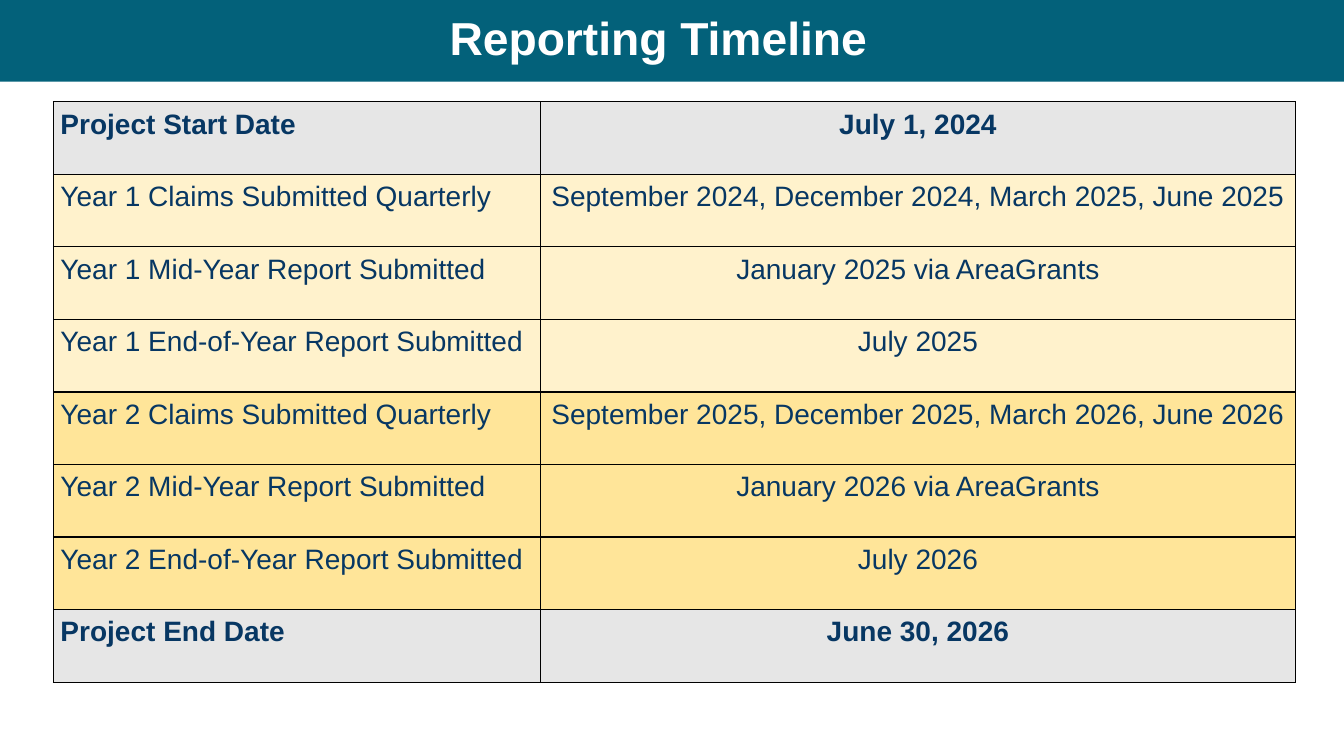
"""Build the reporting timeline slide."""
from dataclasses import dataclass

from lxml.etree import SubElement
from pptx import Presentation
from pptx.dml.color import RGBColor
from pptx.enum.shapes import MSO_SHAPE
from pptx.enum.text import MSO_ANCHOR, PP_ALIGN
from pptx.oxml.ns import qn
from pptx.slide import Slide
from pptx.table import _Cell
from pptx.text.text import _Paragraph
from pptx.util import Inches, Pt

TEAL = RGBColor(0x03, 0x61, 0x7A)
WHITE = RGBColor(0xFF, 0xFF, 0xFF)
NAVY = RGBColor(0x07, 0x37, 0x63)
BLACK = RGBColor(0x00, 0x00, 0x00)
GREY = RGBColor(0xE6, 0xE6, 0xE6)
PALE_YELLOW = RGBColor(0xFF, 0xF2, 0xCC)
YELLOW = RGBColor(0xFF, 0xE5, 0x99)

SLIDE_WIDTH = Inches(13.33)
BANNER_HEIGHT = Inches(0.81)
COLUMN_WIDTHS = (Inches(4.83), Inches(7.49))
ROW_HEIGHT = Inches(0.72)
CELL_MARGIN = Inches(0.07)


@dataclass(frozen=True)
class Milestone:
    label: str
    date: str
    fill: RGBColor
    bold: bool = False


MILESTONES = (
    Milestone("Project Start Date", "July 1, 2024", GREY, True),
    Milestone("Year 1 Claims Submitted Quarterly",
              "September 2024, December 2024, March 2025, June 2025", PALE_YELLOW),
    Milestone("Year 1 Mid-Year Report Submitted", "January 2025 via AreaGrants", PALE_YELLOW),
    Milestone("Year 1 End-of-Year Report Submitted", "July 2025", PALE_YELLOW),
    Milestone("Year 2 Claims Submitted Quarterly",
              "September 2025, December 2025, March 2026, June 2026", YELLOW),
    Milestone("Year 2 Mid-Year Report Submitted", "January 2026 via AreaGrants", YELLOW),
    Milestone("Year 2 End-of-Year Report Submitted", "July 2026", YELLOW),
    Milestone("Project End Date", "June 30, 2026", GREY, True),
)


def format_paragraph(paragraph: _Paragraph, size: int, color: RGBColor,
                     bold: bool, alignment: PP_ALIGN) -> None:
    paragraph.alignment = alignment
    for run in paragraph.runs:
        run.font.name = "Arial"
        run.font.size = Pt(size)
        run.font.bold = bold
        run.font.color.rgb = color


def add_borders(cell: _Cell) -> None:
    properties = cell._tc.get_or_add_tcPr()
    for position, side in enumerate(("a:lnL", "a:lnR", "a:lnT", "a:lnB")):
        line = SubElement(properties, qn(side), w=str(Pt(1)))
        fill = SubElement(line, qn("a:solidFill"))
        SubElement(fill, qn("a:srgbClr"), val=str(BLACK))
        properties.insert(position, line)


def draw_header(slide: Slide) -> None:
    title = slide.shapes.title
    banner = slide.shapes.add_shape(MSO_SHAPE.RECTANGLE, 0, 0, SLIDE_WIDTH, BANNER_HEIGHT)
    banner.shadow.inherit = False
    banner.fill.solid()
    banner.fill.fore_color.rgb = TEAL
    banner.line.fill.background()
    title.element.addprevious(banner.element)

    title.left, title.top = Inches(0.37), 0
    title.width, title.height = Inches(12.32), BANNER_HEIGHT
    text_frame = title.text_frame
    text_frame.text = "Reporting Timeline"
    text_frame.vertical_anchor = MSO_ANCHOR.MIDDLE
    paragraph = text_frame.paragraphs[0]
    paragraph.line_spacing = 0.9
    format_paragraph(paragraph, 33, WHITE, True, PP_ALIGN.CENTER)


def fill_cell(cell: _Cell, text: str, milestone: Milestone, alignment: PP_ALIGN) -> None:
    cell.margin_left = cell.margin_right = CELL_MARGIN
    cell.margin_top = cell.margin_bottom = CELL_MARGIN
    cell.fill.solid()
    cell.fill.fore_color.rgb = milestone.fill
    add_borders(cell)
    cell.text_frame.text = text
    format_paragraph(cell.text_frame.paragraphs[0], 20, NAVY, milestone.bold, alignment)


def draw_timeline(slide: Slide) -> None:
    table = slide.shapes.add_table(
        len(MILESTONES), len(COLUMN_WIDTHS), Inches(0.53), Inches(1.01),
        sum(COLUMN_WIDTHS), ROW_HEIGHT * len(MILESTONES)).table
    table.first_row = False
    table.horz_banding = False
    for column, width in zip(table.columns, COLUMN_WIDTHS):
        column.width = width
    for row, milestone in zip(table.rows, MILESTONES):
        row.height = ROW_HEIGHT
        fill_cell(row.cells[0], milestone.label, milestone, PP_ALIGN.LEFT)
        fill_cell(row.cells[1], milestone.date, milestone, PP_ALIGN.CENTER)


def main() -> None:
    presentation = Presentation()
    presentation.slide_width = SLIDE_WIDTH
    presentation.slide_height = Inches(7.5)
    slide = presentation.slides.add_slide(presentation.slide_layouts[5])
    draw_header(slide)
    draw_timeline(slide)
    presentation.save("out.pptx")


if __name__ == "__main__":
    main()
